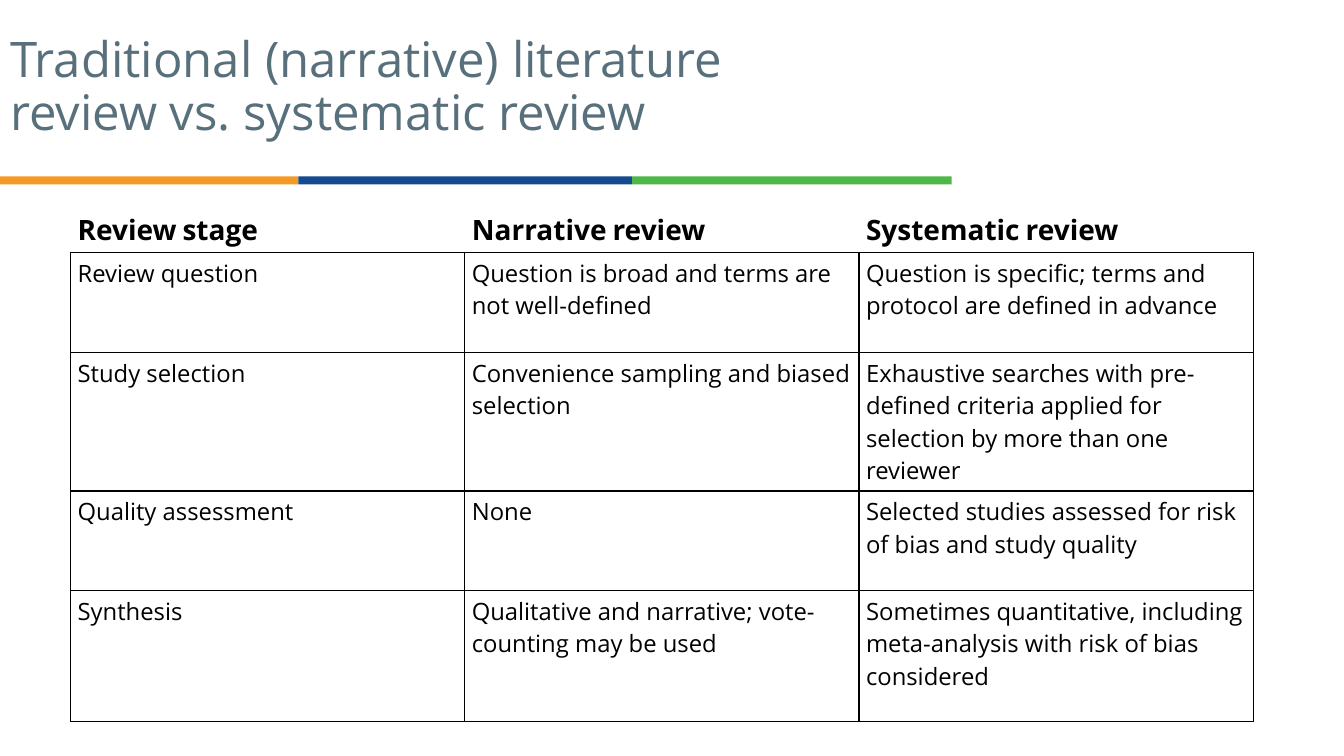
from dataclasses import dataclass

from lxml.etree import SubElement
from pptx import Presentation
from pptx.dml.color import RGBColor
from pptx.enum.shapes import MSO_SHAPE as Shape
from pptx.enum.text import MSO_ANCHOR as Anchor, MSO_AUTO_SIZE as AutoSize, PP_ALIGN as Align
from pptx.oxml.ns import qn
from pptx.util import Inches, Pt

BLACK = RGBColor(0x00, 0x00, 0x00)
SLATE = RGBColor(0x58, 0x6F, 0x7C)
ORANGE = RGBColor(0xF4, 0x99, 0x25)
BLUE = RGBColor(0x15, 0x4A, 0x90)
GREEN = RGBColor(0x4E, 0xB7, 0x48)
FONT = "Open Sans"
WIDTH, HEIGHT = Inches(13.33), Inches(7.5)


def cols(n: float) -> int:
    return round(WIDTH * n / 100)


def rows(n: float) -> int:
    return round(HEIGHT * n / 100)


@dataclass
class Bar:
    left: float
    right: float
    color: RGBColor


@dataclass
class Stage:
    name: str
    narrative: str
    systematic: str
    height: float


BARS = [Bar(0, 22.2, ORANGE), Bar(22.2, 47.04, BLUE), Bar(47.04, 70.8, GREEN)]
HEADER = Stage("Review stage", "Narrative review", "Systematic review", 6)
STAGES = [
    Stage("Review question",
          "Question is broad and terms are not well-defined",
          "Question is specific; terms and protocol are defined in advance", 13.2),
    Stage("Study selection",
          "Convenience sampling and biased selection",
          "Exhaustive searches with pre-defined criteria applied for "
          "selection by more than one reviewer", 17.33),
    Stage("Quality assessment",
          "None",
          "Selected studies assessed for risk of bias and study quality", 13.2),
    Stage("Synthesis",
          "Qualitative and narrative; vote-counting may be used",
          "Sometimes quantitative, including meta-analysis with risk of bias considered", 17.33),
]


def add_text(p, text: str, *, size: float, color: RGBColor = BLACK, bold: bool = False) -> None:
    r = p.add_run()
    r.text = text
    r.font.name, r.font.size, r.font.bold = FONT, Pt(size), bold
    r.font.color.rgb = color


def draw_title(s) -> None:
    sp = s.shapes.title
    sp.left, sp.top, sp.width, sp.height = cols(0), rows(3.73), cols(78.85), rows(15.73)
    tf = sp.text_frame
    tf.word_wrap, tf.auto_size, tf.vertical_anchor = True, AutoSize.NONE, Anchor.MIDDLE
    p = tf.paragraphs[0]
    p.alignment, p.line_spacing = Align.LEFT, 0.9
    add_text(p, "Traditional (narrative) literature", size=35, color=SLATE)
    p.add_line_break()
    add_text(p, "review vs. systematic review", size=35, color=SLATE)


def draw_bar(s, bar: Bar) -> None:
    sp = s.shapes.add_shape(Shape.RECTANGLE, cols(bar.left), rows(23.33),
                            cols(bar.right - bar.left), rows(1.07))
    sp.shadow.inherit = False
    sp.fill.solid()
    sp.fill.fore_color.rgb = bar.color
    sp.line.fill.background()


def set_borders(cell, visible: str) -> None:
    tc_pr = cell._tc.get_or_add_tcPr()
    for i, side in enumerate("LRTB"):
        ln = SubElement(tc_pr, qn(f"a:ln{side}"), w=str(Pt(1)))
        if side in visible:
            fill = SubElement(ln, qn("a:solidFill"))
            SubElement(fill, qn("a:srgbClr"), val=str(BLACK))
        else:
            SubElement(ln, qn("a:noFill"))
        tc_pr.insert(i, ln)


def draw_table(s, stages: list[Stage]) -> None:
    tbl = s.shapes.add_table(len(stages), 3, cols(5.25), rows(27.33), cols(88),
                             rows(sum(stage.height for stage in stages))).table
    tbl.first_row = tbl.horz_banding = False
    for column in tbl.columns:
        column.width = cols(88) // 3
    for i, stage in enumerate(stages):
        tbl.rows[i].height = rows(stage.height)
        for j, text in enumerate((stage.name, stage.narrative, stage.systematic)):
            cell = tbl.cell(i, j)
            cell.margin_left = cell.margin_right = Inches(0.07)
            cell.margin_top = cell.margin_bottom = Inches(0.04)
            cell.fill.background()
            set_borders(cell, "LRTB" if i else "B")
            p = cell.text_frame.paragraphs[0]
            if i:
                add_text(p, text, size=17)
            else:
                first, second = text.split()
                for word, size in ((first, 20), (" ", 16), (second, 20)):
                    add_text(p, word, size=size, bold=True)


def main() -> None:
    prs = Presentation()
    prs.slide_width, prs.slide_height = WIDTH, HEIGHT
    s = prs.slides.add_slide(prs.slide_layouts[5])
    for bar in BARS:
        draw_bar(s, bar)
    draw_title(s)
    draw_table(s, [HEADER, *STAGES])
    prs.save("out.pptx")


if __name__ == "__main__":
    main()
